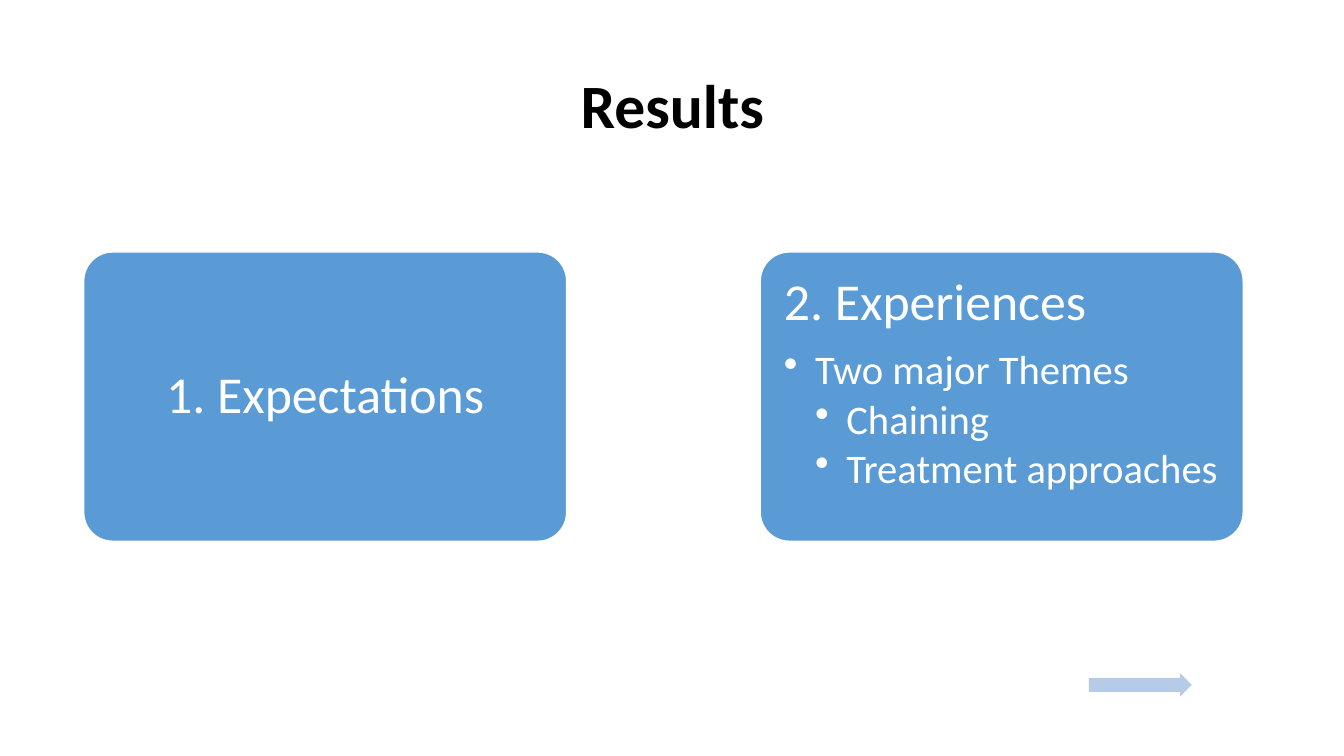
from lxml.etree import SubElement
from pptx import Presentation
from pptx.dml.color import RGBColor
from pptx.enum.shapes import MSO_SHAPE
from pptx.enum.text import MSO_ANCHOR, PP_ALIGN
from pptx.oxml.ns import qn
from pptx.util import Emu, Pt

PX = 9144
COLORS = {"ink": "000000", "paper": "FFFFFF", "card": "5B9BD5", "arrow": "B5CBE7"}
INDENT = 31


def px(value):
    return Emu(value * PX)


def color(name):
    return RGBColor.from_string(COLORS[name])


def write(para, text, size, ink="paper", bold=False, align=PP_ALIGN.LEFT, after=0, level=0):
    para.alignment = align
    para.line_spacing = 0.9
    para.space_before = Pt(0)
    para.space_after = Pt(after)
    para.level = level
    if level:
        props = para._p.get_or_add_pPr()
        props.set("marL", str(px(INDENT * level)))
        props.set("indent", str(px(-INDENT)))
        SubElement(props, qn("a:buChar"), char="•")
    span = para.add_run()
    span.text = text
    span.font.name = "Calibri"
    span.font.size = Pt(size)
    span.font.bold = bold
    span.font.color.rgb = color(ink)


class SlideBuilder:
    def __init__(self, deck):
        self.page = deck.slides.add_slide(deck.slide_layouts[5])

    def title(self, text, left, top, width, height):
        box = self.page.shapes.title
        box.left, box.top, box.width, box.height = map(px, (left, top, width, height))
        box.text_frame.vertical_anchor = MSO_ANCHOR.MIDDLE
        write(box.text_frame.paragraphs[0], text, 44, ink="ink", bold=True, align=PP_ALIGN.CENTER)

    def shape(self, kind, left, top, width, height, fill, adjustments):
        shape = self.page.shapes.add_shape(kind, *map(px, (left, top, width, height)))
        shape.shadow.inherit = False
        shape.fill.solid()
        shape.fill.fore_color.rgb = color(fill)
        shape.line.fill.background()
        for index, value in enumerate(adjustments):
            shape.adjustments[index] = value
        return shape

    def card(self, left, heading, items=()):
        card = self.shape(MSO_SHAPE.ROUNDED_RECTANGLE, left, 250, 479, 287, "card", [0.1])
        card.line.color.rgb = color("paper")
        card.line.width = Pt(1)
        frame = card.text_frame
        frame.word_wrap = True
        frame.margin_left = frame.margin_right = px(15)
        frame.margin_top = frame.margin_bottom = px(15)
        frame.vertical_anchor = MSO_ANCHOR.TOP if items else MSO_ANCHOR.MIDDLE
        align = PP_ALIGN.LEFT if items else PP_ALIGN.CENTER
        write(frame.paragraphs[0], heading, 37, align=align, after=13)
        for level, text in items:
            write(frame.add_paragraph(), text, 29, after=4, level=level)

    def arrow(self, left, top, width, height):
        self.shape(MSO_SHAPE.RIGHT_ARROW, left, top, width, height, "arrow", [0.6, 0.5])


def main():
    deck = Presentation()
    deck.slide_width, deck.slide_height = px(1333), px(750)
    results = SlideBuilder(deck)
    results.title("Results", 92, 40, 1150, 136)
    results.card(83, "1. Expectations")
    results.arrow(1080, 668, 102, 23)
    results.card(754, "2. Experiences", [
        (1, "Two major Themes"),
        (2, "Chaining"),
        (2, "Treatment approaches"),
    ])
    deck.save("out.pptx")


if __name__ == "__main__":
    main()
